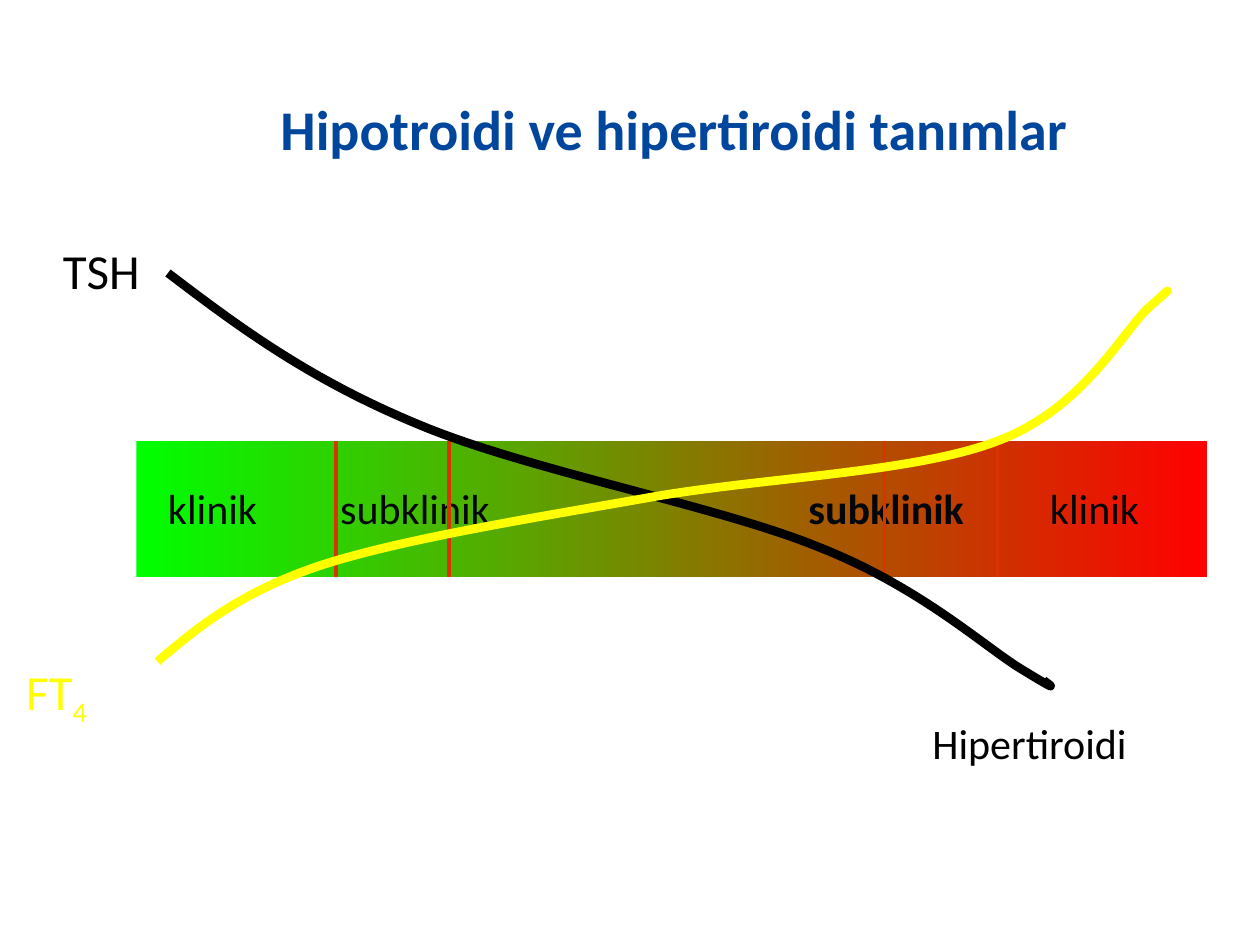
from pptx import Presentation
from pptx.dml.color import RGBColor
from pptx.enum.shapes import MSO_CONNECTOR, MSO_SHAPE
from pptx.enum.text import MSO_ANCHOR, MSO_AUTO_SIZE, PP_ALIGN
from pptx.oxml.ns import qn
from pptx.util import Inches, Pt
from lxml import etree

RECT = MSO_SHAPE.RECTANGLE
LINE = MSO_CONNECTOR.STRAIGHT
LEFT, CENTER = PP_ALIGN.LEFT, PP_ALIGN.CENTER
MIDDLE, TOP = MSO_ANCHOR.MIDDLE, MSO_ANCHOR.TOP
GROW, FIXED = MSO_AUTO_SIZE.SHAPE_TO_FIT_TEXT, MSO_AUTO_SIZE.NONE

COLORS = {
    "title": "00469C",
    "black": "000000",
    "label": "03070C",
    "yellow": "FFFF00",
    "low": "00FF00",
    "high": "FF0000",
    "limit": "D83300",
}
COLS, ROWS = 120, 90
BAND_TOP, BAND_ROWS = 42, 13
LABEL_TOP, LABEL_ROWS = 46, 4.8


def color(name):
    return RGBColor.from_string(COLORS[name])


def assign(target, values):
    for name, value in values.items():
        setattr(target, name, value)


class Board:
    def __init__(self, deck):
        self.font = "Calibri"
        self.cell = deck.slide_width / COLS, deck.slide_height / ROWS
        self.slide = deck.slides.add_slide(deck.slide_layouts[6])
        self.shapes = self.slide.shapes

    def grid(self, *spots):
        return [round(spot * self.cell[i % 2]) for i, spot in enumerate(spots)]

    def stroke(self, shape, name, width):
        shape.line.color.rgb = color(name)
        shape.line.width = Pt(width)

    def band(self, *place):
        shape = self.shapes.add_shape(RECT, *self.grid(*place))
        shape.shadow.inherit = False
        shape.line.fill.background()
        shape.fill.gradient()
        shape.fill.gradient_angle = 0
        for stop, name in zip(shape.fill.gradient_stops, ("low", "high")):
            stop.color.rgb = color(name)

    def text(self, words, place, size, name, bold=False, wrap=False,
             inset=0, align=LEFT, anchor=TOP, fit=GROW, sub=None):
        frame = self.shapes.add_textbox(*self.grid(*place)).text_frame
        assign(frame, {
            "margin_left": inset, "margin_right": inset,
            "margin_top": inset, "margin_bottom": inset,
            "word_wrap": wrap, "auto_size": fit, "vertical_anchor": anchor,
        })
        para = frame.paragraphs[0]
        para.alignment = align
        for part in filter(None, (words, sub)):
            run = para.add_run()
            run.text = part
            assign(run.font, {"name": self.font, "size": Pt(size), "bold": bold})
            run.font.color.rgb = color(name)
        if sub:
            run._r.get_or_add_rPr().set("baseline", "-25000")

    def limit(self, col):
        ends = self.grid(col, BAND_TOP, col, BAND_TOP + BAND_ROWS)
        line = self.shapes.add_connector(LINE, *ends)
        self.stroke(line, "limit", 2)
        etree.SubElement(line.element.spPr, qn("a:effectLst"))

    def curve(self, spots, name):
        start, *rest = [self.grid(*spot) for spot in spots]
        maker = self.shapes.build_freeform(*start)
        maker.add_line_segments(rest, close=False)
        shape = maker.convert_to_shape()
        shape.shadow.inherit = False
        shape.fill.background()
        self.stroke(shape, name, 5)
        steps = list(shape.element.iter(qn("a:lnTo")))
        for i in range(0, len(steps), 3):
            bend = etree.Element(qn("a:cubicBezTo"))
            steps[i].addprevious(bend)
            for step in steps[i:i + 3]:
                bend.append(step[0])
                step.getparent().remove(step)


def main():
    deck = Presentation()
    deck.slide_width, deck.slide_height = Inches(10), Inches(7.5)
    board = Board(deck)
    board.band(13, BAND_TOP, 102, BAND_ROWS)
    board.text("Hipotroidi ve hipertiroidi tanımlar", (11.2, 4.7, 106, 15),
               32, "title", bold=True, wrap=True, inset=Inches(0.05),
               align=CENTER, anchor=MIDDLE, fit=FIXED)
    board.text("TSH", (6, 22.9, 9.4, 5.6), 28, "black")
    board.text("FT", (2.5, 63, 12.5, 5.6), 28, "yellow", wrap=True, sub="4")
    board.text("Hipertiroidi", (88.8, 68.3, 19.1, LABEL_ROWS), 24, "black")
    for words, col, width, bold in (
        ("klinik", 16, 8.9, False),
        ("subklinik", 32.4, 17.2, False),
        ("subklinik", 77, 16, True),
        ("klinik", 100, 8.9, False),
    ):
        board.text(words, (col, LABEL_TOP, width, LABEL_ROWS), 24, "label",
                   bold=bold, wrap=words == "subklinik")
    for col in (42.75, 32, 95, 84.25):
        board.limit(col)
    board.curve([
        (16, 26), (22.7, 31.1), (29.4, 36.1), (39.8, 40.4),
        (50.2, 44.8), (68.6, 48.2), (78.2, 52.2),
        (87.8, 56), (94, 61.8), (97.4, 63.8),
        (101, 66), (100.2, 65.4), (99.4, 64.8),
    ], "black")
    board.curve([
        (15, 63), (18.8, 59.8), (22.7, 56.5), (30.4, 53.9),
        (38, 51.4), (50.4, 49.4), (61.2, 47.5),
        (72, 45.5), (87, 45.1), (95, 42),
        (103.1, 39), (106.9, 31.6), (109.4, 29.3),
        (112, 27), (111.2, 27.7), (110.5, 28.3),
    ], "yellow")
    deck.save("out.pptx")


if __name__ == "__main__":
    main()
